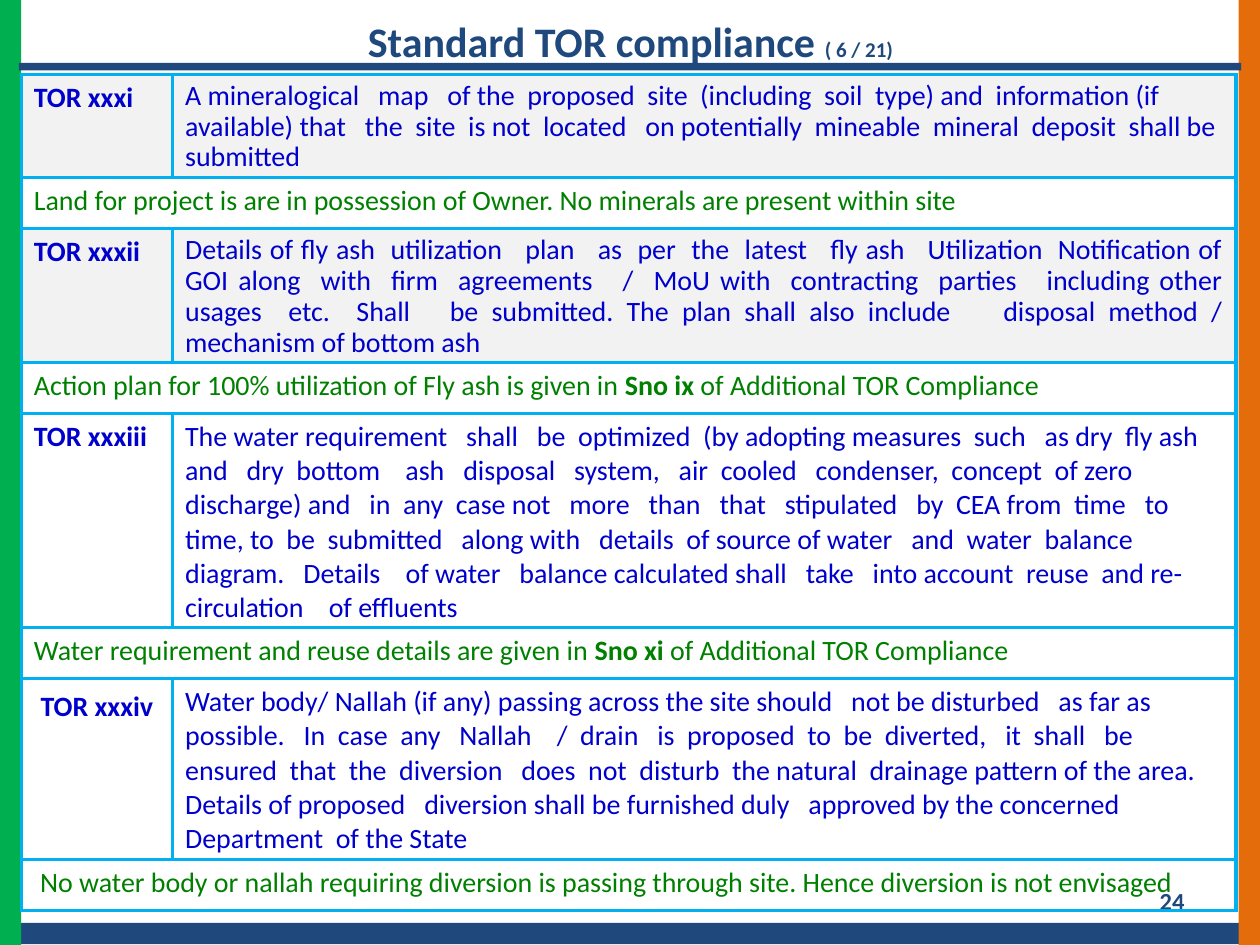
from dataclasses import dataclass

from lxml.etree import SubElement
from pptx import Presentation
from pptx.dml.color import RGBColor
from pptx.enum.shapes import MSO_SHAPE
from pptx.enum.text import MSO_ANCHOR, MSO_AUTO_SIZE, PP_ALIGN
from pptx.oxml.ns import qn
from pptx.util import Pt

COLORS = {
    "navy": "1F497D", "green": "00B050", "orange": "E46C0A",
    "border": "00B0F0", "shade": "F2F2F2",
    "requirement": "0000CC", "reply": "008000",
}
FONT = "Calibri"
BODY_SIZE = 16
REPLY_HEIGHT = 29.2


@dataclass
class Bar:
    left: float
    top: float
    width: float
    height: float
    color: str


@dataclass
class Clause:
    label: str
    text: str
    reply: list[tuple[str, bool]]
    height: float
    shaded: bool = False
    spacing: float | None = None
    align: PP_ALIGN = PP_ALIGN.LEFT
    label_align: PP_ALIGN = PP_ALIGN.LEFT
    label_spacing: float | None = None


BARS = [
    Bar(12, 527.4, 698.4, 12.2, "navy"),
    Bar(0, 0, 12.2, 540, "green"),
    Bar(707.8, 0, 12.2, 540, "orange"),
    Bar(10.8, 36, 698.4, 4.3, "navy"),
]

CLAUSES = [
    Clause(
        "TOR xxxi",
        "A mineralogical   map   of the  proposed  site  (including  soil  type) and  "
        "information (if available) that   the  site  is not  located   on potentially  "
        "mineable  mineral  deposit  shall be  submitted",
        [("Land for project is are in possession of Owner. "
          "No minerals are present within site", False)],
        58.8, shaded=True, spacing=0.9),
    Clause(
        "TOR xxxii",
        "Details of fly ash  utilization   plan   as  per  the  latest   fly ash   "
        "Utilization  Notification of GOI along  with  firm  agreements   /  MoU with  "
        "contracting  parties   including other usages  etc.  Shall   be submitted. "
        "The plan shall also include    disposal method / mechanism of bottom ash",
        [("Action plan for 100% utilization of Fly ash is given in ", False),
         ("Sno ix ", True), ("of Additional TOR Compliance", False)],
        76.4, shaded=True, spacing=0.9,
        align=PP_ALIGN.JUSTIFY, label_align=PP_ALIGN.JUSTIFY),
    Clause(
        "TOR xxxiii",
        "The water requirement   shall   be  optimized  (by adopting measures  such   "
        "as dry  fly ash  and   dry  bottom    ash   disposal   system,   air  cooled   "
        "condenser,  concept  of zero discharge) and   in  any  case not   more   than   "
        "that   stipulated   by  CEA from  time   to time, to  be  submitted   along "
        "with   details  of source of water   and  water  balance diagram.   Details    "
        "of water   balance calculated shall   take   into account  reuse  and "
        "re-circulation    of effluents",
        [("Water requirement and reuse details are given in ", False),
         ("Sno xi ", True), ("of Additional TOR Compliance", False)],
        122.2),
    Clause(
        "TOR xxxiv",
        "Water body/ Nallah (if any) passing across the site should   not be disturbed   "
        "as far as possible.   In  case  any   Nallah    /  drain   is  proposed  to  be  "
        "diverted,   it  shall   be ensured  that  the  diversion   does  not  disturb  "
        "the natural  drainage pattern of the area. Details of proposed   diversion shall "
        "be furnished duly   approved by the concerned Department  of the State",
        [(" No water body or nallah requiring diversion is passing through site. "
          "Hence diversion is not envisaged", False)],
        102.8, label_align=PP_ALIGN.CENTER, label_spacing=1.14),
]


def rgb(name: str) -> RGBColor:
    return RGBColor.from_string(COLORS[name])


def add_run(p, text: str, size: float, color: str, bold: bool = False) -> None:
    r = p.add_run()
    r.text = text
    r.font.name = FONT
    r.font.size = Pt(size)
    r.font.bold = bold
    r.font.color.rgb = rgb(color)


def add_bar(s, bar: Bar) -> None:
    sp = s.shapes.add_shape(MSO_SHAPE.RECTANGLE, Pt(bar.left), Pt(bar.top),
                            Pt(bar.width), Pt(bar.height))
    sp.shadow.inherit = False
    sp.fill.solid()
    sp.fill.fore_color.rgb = rgb(bar.color)
    sp.line.fill.background()


def style_cell(cell, shaded: bool = False) -> None:
    """Draw the four borders, then set the fill, in schema order."""
    tc_pr = cell._tc.get_or_add_tcPr()
    for side in ("lnL", "lnR", "lnT", "lnB"):
        ln = SubElement(tc_pr, qn(f"a:{side}"), w=str(Pt(2.25)))
        fill = SubElement(ln, qn("a:solidFill"))
        SubElement(fill, qn("a:srgbClr"), val=COLORS["border"])
    if shaded:
        cell.fill.solid()
        cell.fill.fore_color.rgb = rgb("shade")
    else:
        cell.fill.background()


def write_cell(cell, runs: list[tuple[str, bool]], color: str,
               align: PP_ALIGN = PP_ALIGN.LEFT, spacing: float | None = None) -> None:
    p = cell.text_frame.paragraphs[0]
    p.alignment = align
    p.line_spacing = spacing
    for text, bold in runs:
        add_run(p, text, BODY_SIZE, color, bold)


def add_title(s) -> None:
    sp = s.shapes.title
    sp.left, sp.top, sp.width, sp.height = Pt(12.2), Pt(1.4), Pt(696.2), Pt(38.9)
    tf = sp.text_frame
    tf.word_wrap = True
    tf.auto_size = MSO_AUTO_SIZE.SHAPE_TO_FIT_TEXT
    tf.vertical_anchor = MSO_ANCHOR.TOP
    p = tf.paragraphs[0]
    p.alignment = PP_ALIGN.CENTER
    p.line_spacing = 1.14
    p.space_before = Pt(0)
    add_run(p, "Standard TOR compliance ", 24, "navy", True)
    add_run(p, "( 6 / 21)", 12, "navy", True)


def add_page_number(s, number: str) -> None:
    sp = s.shapes.add_textbox(Pt(516.2), Pt(500.4), Pt(167.8), Pt(28.8))
    tf = sp.text_frame
    tf.word_wrap = True
    tf.vertical_anchor = MSO_ANCHOR.MIDDLE
    p = tf.paragraphs[0]
    p.alignment = PP_ALIGN.RIGHT
    add_run(p, number, 14, "navy", True)


def add_clause_table(s, clauses: list[Clause]) -> None:
    """Each clause takes a label/text row and a merged reply row."""
    heights = [h for c in clauses for h in (c.height, REPLY_HEIGHT)]
    widths = (86.4, 607.7)
    table = s.shapes.add_table(len(heights), 2, Pt(12.2), Pt(42.5),
                               Pt(sum(widths)), Pt(sum(heights))).table
    table.first_row = table.horz_banding = False
    for column, width in zip(table.columns, widths):
        column.width = Pt(width)
    for row, height in zip(table.rows, heights):
        row.height = Pt(height)

    for i, c in enumerate(clauses):
        label, text = table.cell(2 * i, 0), table.cell(2 * i, 1)
        reply, reply_end = table.cell(2 * i + 1, 0), table.cell(2 * i + 1, 1)
        reply.merge(reply_end)
        for cell in (label, text):
            style_cell(cell, c.shaded)
        for cell in (reply, reply_end):
            style_cell(cell)
        write_cell(label, [(c.label, True)], "requirement", c.label_align, c.label_spacing)
        write_cell(text, [(c.text, False)], "requirement", c.align, c.spacing)
        write_cell(reply, c.reply, "reply")


def main() -> None:
    prs = Presentation()
    prs.slide_width, prs.slide_height = Pt(720), Pt(540)
    s = prs.slides.add_slide(prs.slide_layouts[5])
    add_title(s)
    for bar in BARS:
        add_bar(s, bar)
    add_page_number(s, "24")
    add_clause_table(s, CLAUSES)
    prs.save("out.pptx")


if __name__ == "__main__":
    main()
